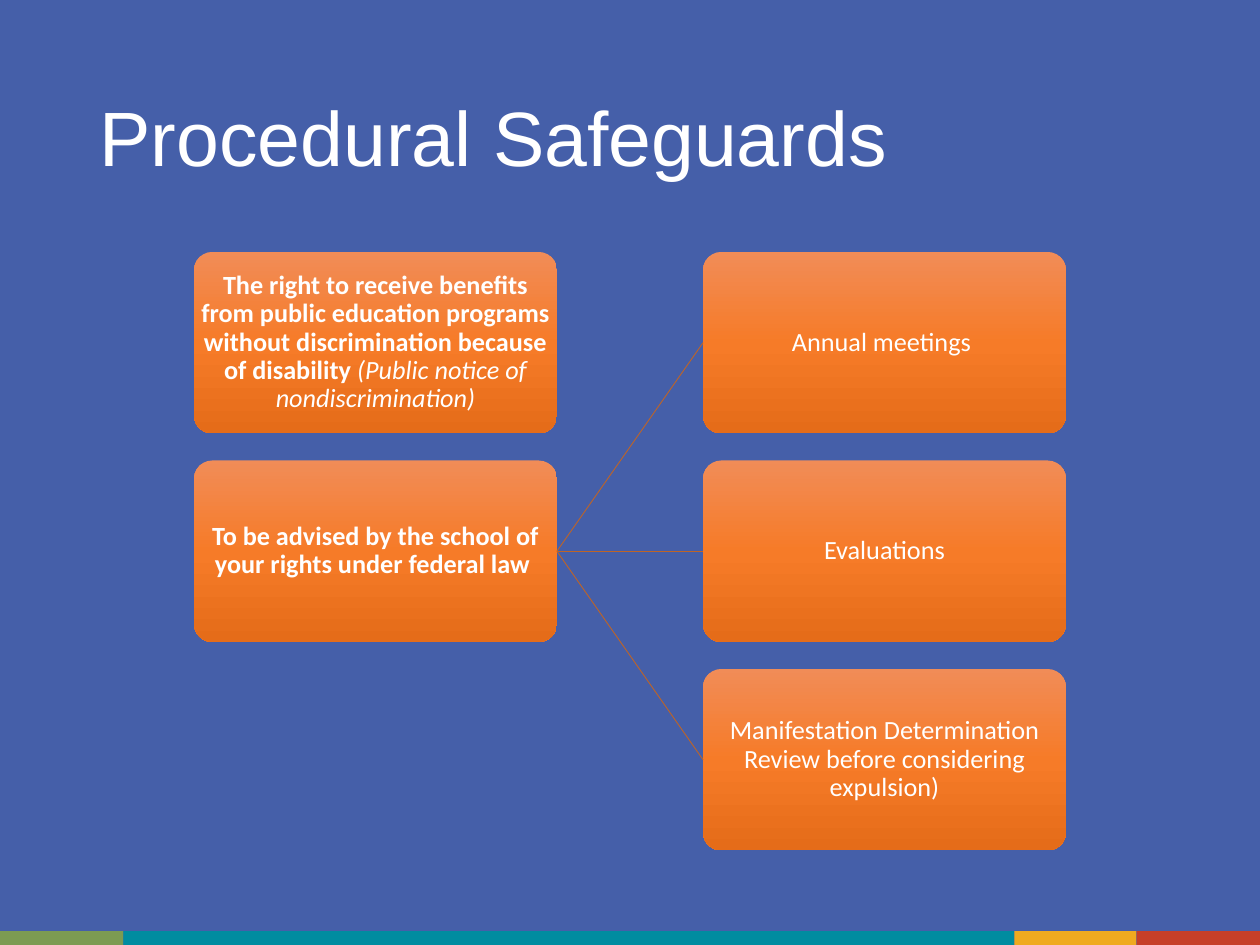
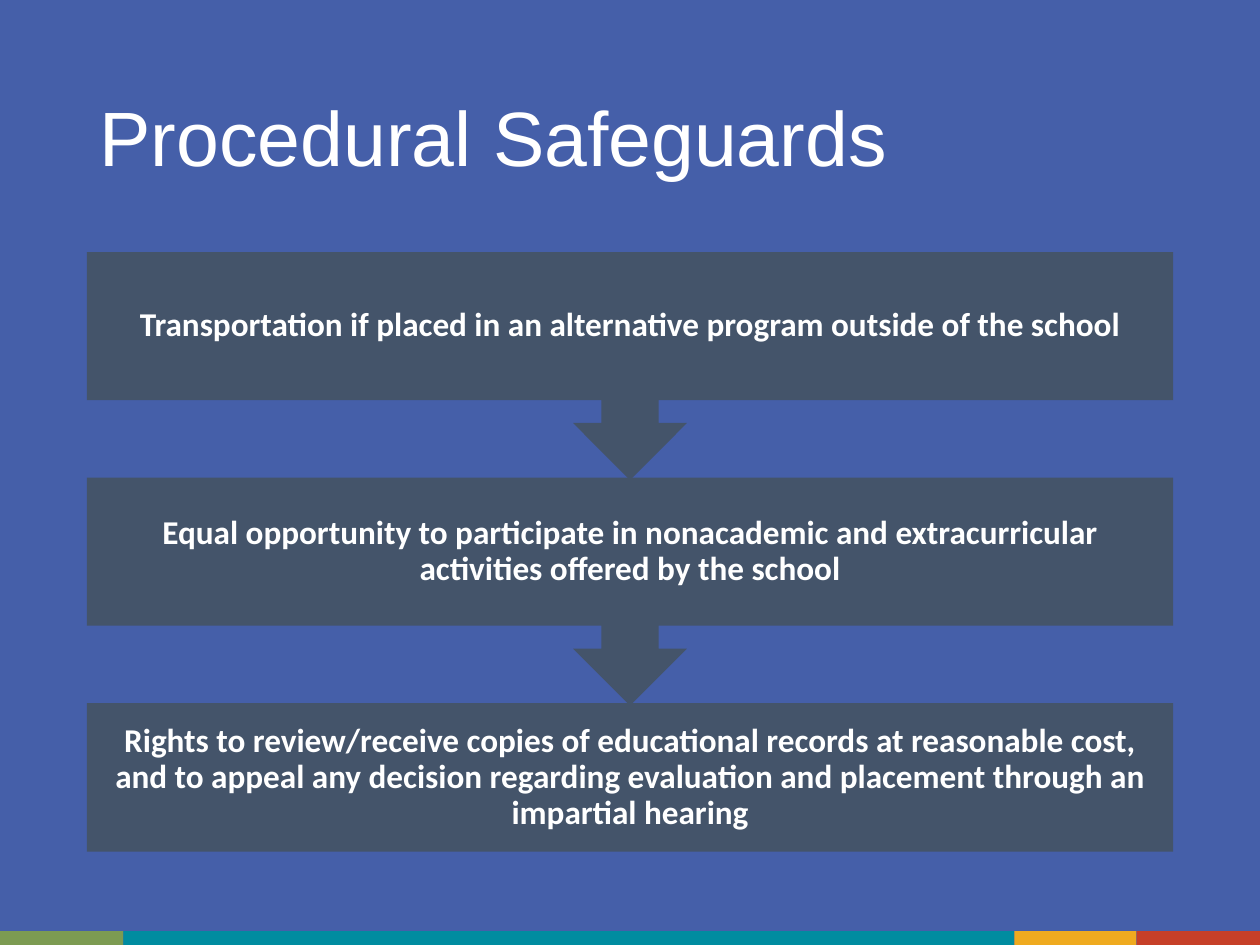
from copy import deepcopy

from lxml import etree
from pptx import Presentation
from pptx.dml.color import RGBColor
from pptx.enum.shapes import MSO_CONNECTOR, MSO_SHAPE
from pptx.enum.text import MSO_ANCHOR as ANCHOR, MSO_AUTO_SIZE, PP_ALIGN as ALIGN
from pptx.oxml.ns import qn
from pptx.util import Inches, Pt

COLORS = {
    "background": "455FA9", "white": "FFFFFF", "slate": "44546A", "link": "BE6427",
    "green": "7C9B52", "teal": "008CA0", "amber": "EFAA1F", "red": "C63F28",
    "orange_top": "F18C57", "orange_mid": "F67B28", "orange_low": "E56C19",
}
RGB = {name: RGBColor.from_string(value) for name, value in COLORS.items()}


def add_block(slide, kind, left, top, width, height, fill):
    """Add a plain shape with a solid fill and neither line nor shadow."""
    sp = slide.shapes.add_shape(kind, Inches(left), Inches(top), Inches(width), Inches(height))
    sp.shadow.inherit = False
    sp.line.fill.background()
    sp.fill.solid()
    sp.fill.fore_color.rgb = RGB[fill]
    return sp


def write(sp, runs, size, font, align, inset):
    """Fill a shape with one paragraph of (text, bold, italic) runs."""
    tf = sp.text_frame
    tf.word_wrap = True
    tf.auto_size = MSO_AUTO_SIZE.NONE
    tf.vertical_anchor = ANCHOR.MIDDLE
    tf.margin_left = tf.margin_right = Inches(inset)
    tf.margin_top = tf.margin_bottom = Inches(inset)
    p = tf.paragraphs[0]
    p.alignment = align
    p.line_spacing = 0.9
    for text, bold, italic in runs:
        r = p.add_run()
        r.text = text
        r.font.name, r.font.size = font, Pt(size)
        r.font.bold, r.font.italic = bold, italic
        r.font.color.rgb = RGB["white"]


prs = Presentation()
prs.slide_width, prs.slide_height = Inches(10), Inches(7.5)
master = prs.slide_master
master.background.fill.solid()
master.background.fill.fore_color.rgb = RGB["background"]
layout = prs.slide_layouts.get_by_name("Title Only")
title = layout.placeholders[0]
title.left, title.top = Inches(0.69), Inches(0.4)
title.width, title.height = Inches(8.62), Inches(1.45)

rights_slide, services_slide = [prs.slides.add_slide(layout) for _ in range(2)]
for s in prs.slides:
    write(s.shapes.title, [("Procedural Safeguards", False, False)], 44, "Arial", ALIGN.LEFT, 0.1)

# Footer bands, moved to the master so that every slide shows them
left = 0
for color, width in [("green", 0.98), ("teal", 7.07), ("amber", 0.97), ("red", 0.98)]:
    band = add_block(rights_slide, MSO_SHAPE.RECTANGLE, left, 7.39, width, 0.11, color)
    master.shapes.element.append(band.element)
    left += width

# Slide 1: rights on the left, what the school advises on at the right
TOP, ROW_PITCH = 2, 1.655
columns = [
    (1.54, [
        [("The right to receive benefits from public education programs without "
          "discrimination because of disability ", True, False),
         ("(Public notice of nondiscrimination)", False, True)],
        [("To be advised by the school of your rights under federal law ", True, False)],
    ]),
    (5.58, [
        [("Annual meetings ", False, False)],
        [("Evaluations", False, False)],
        [("Manifestation Determination Review before considering expulsion)", False, False)],
    ]),
]
cards = []
for left, column in columns:
    cards.append([])
    for row, runs in enumerate(column):
        card = add_block(rights_slide, MSO_SHAPE.ROUNDED_RECTANGLE,
                         left, TOP + row * ROW_PITCH, 2.88, 1.44, "orange_mid")
        card.adjustments[0] = 0.1
        card.fill.gradient()
        card.fill.gradient_angle = 270
        stop_list = card.element.find(".//" + qn("a:gsLst"))
        stop_list.insert(1, deepcopy(stop_list[0]))
        stops = zip(card.fill.gradient_stops, ["orange_top", "orange_mid", "orange_low"])
        for i, (stop, color) in enumerate(stops):
            stop.position = i / 2
            stop.color.rgb = RGB[color]
        write(card, runs, 15, "Calibri", ALIGN.CENTER, 0.01)
        cards[-1].append(card)

advised_card = cards[0][1]
RIGHT_SITE, LEFT_SITE = 3, 1
for topic_card in cards[1]:
    link = rights_slide.shapes.add_connector(MSO_CONNECTOR.STRAIGHT, 0, 0, 0, 0)
    link.begin_connect(advised_card, RIGHT_SITE)
    link.end_connect(topic_card, LEFT_SITE)
    link.line.color.rgb = RGB["link"]
    link.line.width = Pt(0.5)
    etree.SubElement(link.element.spPr, qn("a:effectLst"))

# Slide 2: steps from top to bottom, the last one without an arrow
steps = [
    "Transportation if placed in an alternative program outside of the school",
    "Equal opportunity to participate in nonacademic and extracurricular "
    "activities offered by the school",
    "Rights to review/receive copies of educational records at reasonable cost, and to appeal "
    "any decision regarding evaluation and placement through an impartial hearing",
]
for i, text in enumerate(steps):
    last = i == len(steps) - 1
    kind = MSO_SHAPE.RECTANGLE if last else MSO_SHAPE.DOWN_ARROW_CALLOUT
    step = add_block(services_slide, kind, 0.69, TOP + i * 1.79, 8.62,
                     1.18 if last else 1.81, "slate")
    write(step, [(text, True, False)], 19, "Calibri", ALIGN.CENTER, 0.15)

prs.save("out.pptx")
